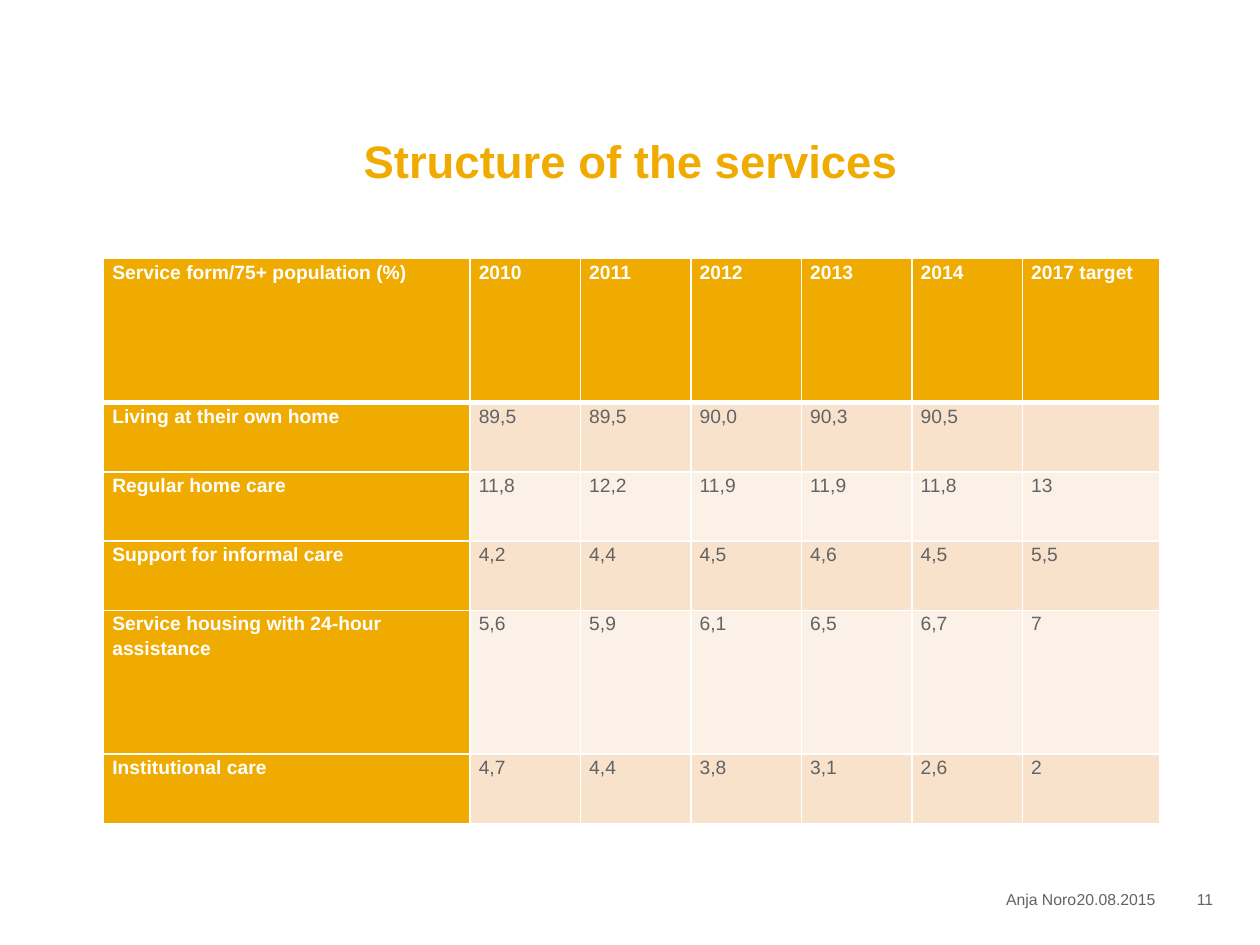
"""Build the slide that tabulates the structure of services for the 75+ population."""
from dataclasses import dataclass

from lxml.etree import SubElement
from pptx import Presentation
from pptx.dml.color import RGBColor
from pptx.enum.text import MSO_ANCHOR as Anchor, PP_ALIGN as Align
from pptx.oxml.ns import qn
from pptx.slide import Slide
from pptx.util import Pt

AMBER = RGBColor(0xF0, 0xAB, 0x00)
PEACH = RGBColor(0xF9, 0xE2, 0xCC)
CREAM = RGBColor(0xFC, 0xF1, 0xE7)
GREY = RGBColor(0x61, 0x63, 0x65)
WHITE = RGBColor(0xFF, 0xFF, 0xFF)

YEARS = ["2010", "2011", "2012", "2013", "2014", "2017 target"]
SERVICES = {
    "Living at their own home": ["89,5", "89,5", "90,0", "90,3", "90,5", ""],
    "Regular home care": ["11,8", "12,2", "11,9", "11,9", "11,8", "13"],
    "Support for informal care": ["4,2", "4,4", "4,5", "4,6", "4,5", "5,5"],
    "Service housing with 24-hour assistance": ["5,6", "5,9", "6,1", "6,5", "6,7", "7"],
    "Institutional care": ["4,7", "4,4", "3,8", "3,1", "2,6", "2"],
}
COLUMN_WIDTHS = [209.4] + [63.15] * 5 + [78.6]
ROW_HEIGHTS = [82.2, 39.6, 39.6, 39.6, 82.2, 39.6]


def write(frame, text, size=9, color=GREY, bold=False, align=Align.LEFT, spacing=None, font="Arial"):
    paragraph = frame.paragraphs[0]
    paragraph.alignment = align
    paragraph.line_spacing = spacing
    if text:
        run = paragraph.add_run()
        run.text = text
        run.font.name = font
        run.font.size = Pt(size)
        run.font.bold = bold
        run.font.color.rgb = color


@dataclass
class SlideWriter:
    slide: Slide
    font: str = "Arial"
    cell_size: float = 11
    cell_spacing: float = 1.15

    def text(self, text, left, top, width, height, margins=(0, 0, 0, 0), wrap=True, **style):
        box = self.slide.shapes.add_textbox(Pt(left), Pt(top), Pt(width), Pt(height))
        frame = box.text_frame
        frame.word_wrap = wrap
        frame.vertical_anchor = Anchor.BOTTOM
        (frame.margin_left, frame.margin_top,
         frame.margin_right, frame.margin_bottom) = map(Pt, margins)
        write(frame, text, font=self.font, **style)

    def borders(self, cell, widths):
        properties = cell._tc.get_or_add_tcPr()
        for index, (side, width) in enumerate(widths.items()):
            line = properties.makeelement(qn(f"a:ln{side}"), {"w": str(Pt(width))})
            fill = SubElement(line, qn("a:solidFill"))
            SubElement(fill, qn("a:srgbClr"), val=str(WHITE))
            properties.insert(index, line)

    def table(self, rows, left, top, widths, heights):
        frame = self.slide.shapes.add_table(
            len(rows), len(widths), Pt(left), Pt(top), Pt(sum(widths)), Pt(sum(heights)))
        table = frame.table
        for column, width in zip(table.columns, widths):
            column.width = Pt(width)
        for r, (values, height) in enumerate(zip(rows, heights)):
            table.rows[r].height = Pt(height)
            for c, value in enumerate(values):
                heading = r == 0 or c == 0
                cell = table.cell(r, c)
                cell.margin_left = cell.margin_right = Pt(5)
                cell.margin_top = cell.margin_bottom = Pt(0)
                cell.fill.solid()
                cell.fill.fore_color.rgb = AMBER if heading else PEACH if r % 2 else CREAM
                self.borders(cell, {"L": 1, "R": 1, "T": 3 if r == 1 else 1, "B": 3 if r == 0 else 1})
                write(cell.text_frame, value, size=self.cell_size, color=WHITE if heading else GREY,
                      bold=heading, spacing=self.cell_spacing, font=self.font)


def main():
    presentation = Presentation()
    presentation.slide_width, presentation.slide_height = Pt(720), Pt(540)
    writer = SlideWriter(presentation.slides.add_slide(presentation.slide_layouts[6]))
    writer.text("20.08.2015", 614.9, 504.7, 45.4, 14.4, wrap=False, align=Align.RIGHT)
    writer.text("Anja Noro", 495.4, 504.7, 119.5, 14.4, align=Align.RIGHT)
    writer.text("11", 660.2, 503.3, 59.8, 15.8, margins=(0, 0, 2.9, 0), align=Align.CENTER)
    writer.text("Structure of the services", 59.8, 21.6, 601.2, 89.3, margins=(7.2, 3.6, 7.2, 3.6),
                size=26, color=AMBER, bold=True, align=Align.CENTER)
    rows = [["Service form/75+ population (%)", *YEARS]]
    rows += [[service, *shares] for service, shares in SERVICES.items()]
    writer.table(rows, 59.2, 147.8, COLUMN_WIDTHS, ROW_HEIGHTS)
    presentation.save("out.pptx")


if __name__ == "__main__":
    main()
